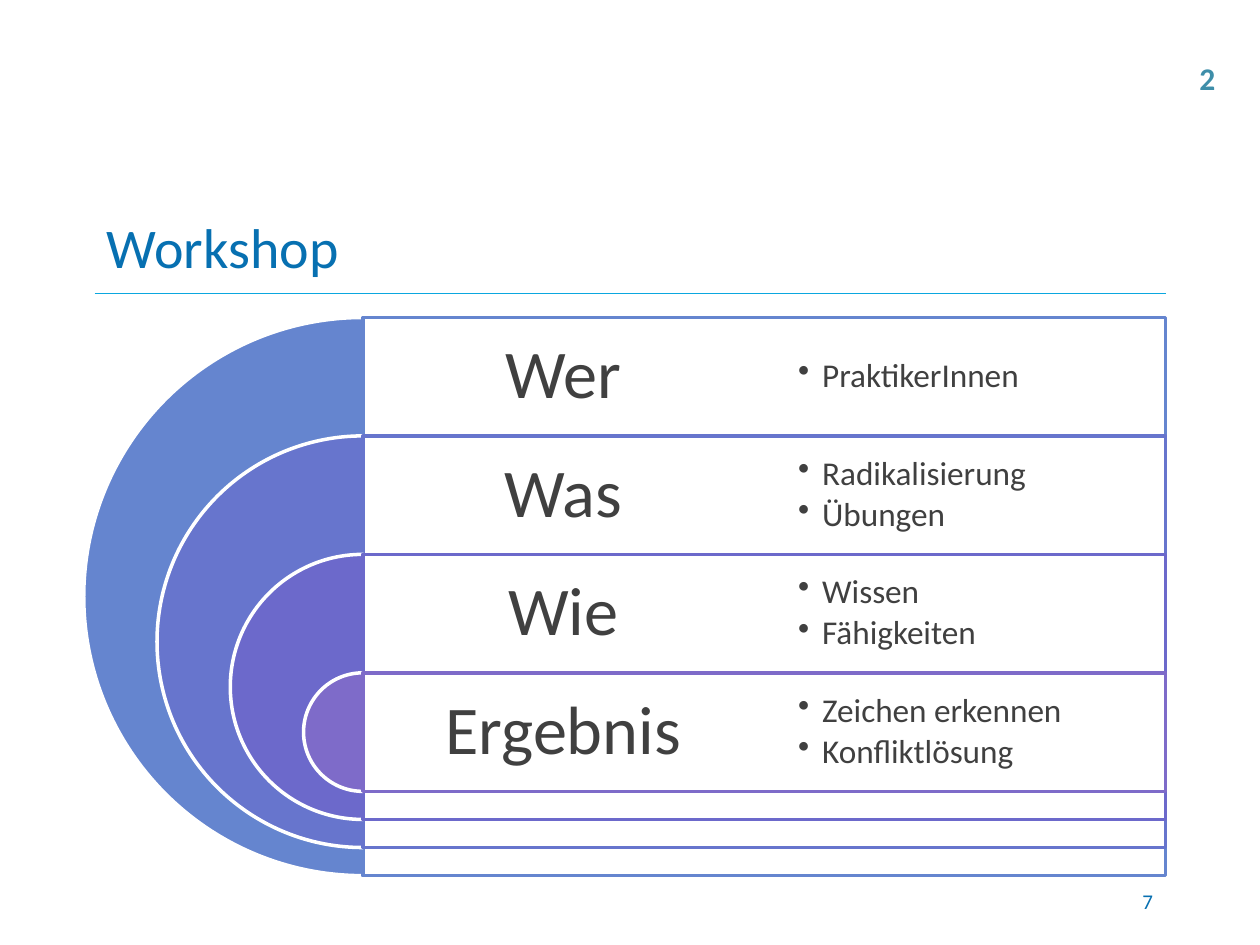
from lxml import etree
from pptx import Presentation
from pptx.dml.color import RGBColor
from pptx.enum import shapes, text
from pptx.oxml.ns import qn
from pptx.util import Inches, Pt

WHITE = RGBColor(0xFF, 0xFF, 0xFF)
BLUE = RGBColor(0x07, 0x70, 0xB1)
RULE = RGBColor(0x0B, 0xA7, 0xDF)
TEAL = RGBColor(0x3E, 0x8E, 0xA9)
GRAY = RGBColor(0x40, 0x40, 0x40)
ROWS = [
    ("Wer", ["PraktikerInnen"], RGBColor(0x65, 0x85, 0xCF)),
    ("Was", ["Radikalisierung", "Übungen"], RGBColor(0x67, 0x75, 0xCD)),
    ("Wie", ["Wissen", "Fähigkeiten"], RGBColor(0x6C, 0x69, 0xCB)),
    ("Ergebnis", ["Zeichen erkennen", "Konfliktlösung"], RGBColor(0x7E, 0x6B, 0xC9)),
]
TOP, CENTER, ROW = 2.52, 2.88, 0.94
DIAMETER, SHRINK = 4.43, 1.163
PANEL, HALF = 6.37, 3.18


def add_text(s, box, lines, size, color, align=text.PP_ALIGN.LEFT, inset=None,
             spacing=None, bullets=False):
    tf = s.shapes.add_textbox(*map(Inches, box)).text_frame
    tf.word_wrap = True
    tf.vertical_anchor = text.MSO_ANCHOR.MIDDLE
    if inset is not None:
        tf.margin_left = tf.margin_right = Inches(inset)
        tf.margin_top = tf.margin_bottom = Inches(inset)
    tf.text = "\n".join(lines)
    for i, p in enumerate(tf.paragraphs):
        if bullets:
            pPr = p._p.get_or_add_pPr()
            pPr.set("marL", str(Inches(0.19)))
            pPr.set("indent", str(Inches(-0.19)))
            etree.SubElement(pPr, qn("a:buChar")).set("char", "•")
        p.alignment = align
        if spacing:
            p.line_spacing = spacing
        if i:
            p.space_before = Pt(3)
        font = p.runs[0].font
        font.name, font.size, font.color.rgb = "Calibri", Pt(size), color
    return tf


def add_shape(s, kind, box, fill, line):
    sp = s.shapes.add_shape(kind, *map(Inches, box))
    sp.shadow.inherit = False
    sp.fill.solid()
    sp.fill.fore_color.rgb = fill
    sp.line.color.rgb = line
    sp.line.width = Pt(2)
    return sp


prs = Presentation()
prs.slide_width, prs.slide_height = Inches(10), Inches(7.5)
s = prs.slides.add_slide(prs.slide_layouts[6])

rule = s.shapes.add_connector(shapes.MSO_CONNECTOR.STRAIGHT, Inches(0.75), Inches(2.33),
                              Inches(9.25), Inches(2.33))
rule.line.color.rgb = RULE
rule.line.width = Pt(0.75)
etree.SubElement(rule._element.spPr, qn("a:effectLst"))

for i, (heading, points, color) in enumerate(ROWS):
    y = TOP + i * ROW
    d = DIAMETER - i * SHRINK
    pie = add_shape(s, shapes.MSO_SHAPE.PIE, (CENTER - d / 2, y, d, d), color, WHITE)
    pie.adjustments[0], pie.adjustments[1] = 54, 162  # left half
    panel = add_shape(s, shapes.MSO_SHAPE.RECTANGLE, (CENTER, y, PANEL, d), WHITE, color)
    fill_color = panel._element.spPr.find(qn("a:solidFill"))[0]
    etree.SubElement(fill_color, qn("a:alpha")).set("val", "90000")
    add_text(s, (CENTER, y, HALF, ROW), [heading], 39, GRAY, text.PP_ALIGN.CENTER,
             inset=0.16, spacing=0.9)
    add_text(s, (CENTER + PANEL / 2, y, HALF, ROW), points, 19, GRAY,
             inset=0.27, spacing=0.9, bullets=True)

add_text(s, (0.75, 1.58, 8.5, 0.75), ["Workshop"], 32, BLUE)
add_text(s, (7.17, 6.95, 2.08, 0.4), ["7"], 12, BLUE, text.PP_ALIGN.RIGHT)
tf = add_text(s, (9.42, 0.42, 0.33, 0.4), ["2"], 18, TEAL)
tf.word_wrap = False
tf.vertical_anchor = text.MSO_ANCHOR.TOP
tf.paragraphs[0].runs[0].font.bold = True

prs.save("out.pptx")
